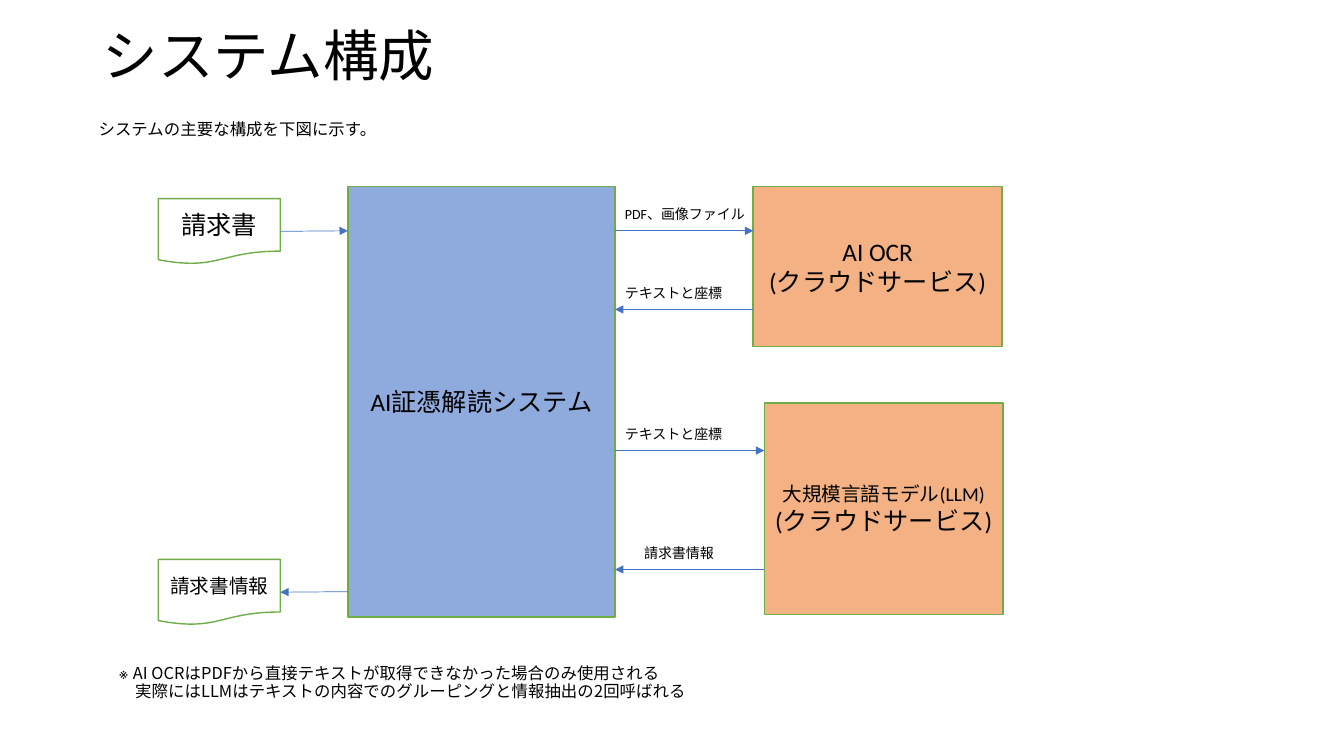
from lxml.etree import SubElement
from pptx import Presentation
from pptx.dml.color import RGBColor
from pptx.enum.shapes import MSO_CONNECTOR, MSO_SHAPE
from pptx.enum.text import MSO_ANCHOR, MSO_AUTO_SIZE, PP_ALIGN
from pptx.oxml.ns import qn
from pptx.util import Pt

PX = 9144
BLACK = RGBColor(0x00, 0x00, 0x00)
WHITE = RGBColor(0xFF, 0xFF, 0xFF)
GREEN = RGBColor(0x70, 0xAD, 0x47)
BLUE = RGBColor(0x8F, 0xAA, 0xDC)
ORANGE = RGBColor(0xF4, 0xB1, 0x83)
ARROW = RGBColor(0x44, 0x72, 0xC4)
LATIN, SYMBOL, CJK = "Calibri", "Arial", "Noto Sans CJK JP"
RIGHT = 3


def emu(*lengths):
    """Turn px lengths into EMU."""
    return [n * PX for n in lengths]


def add_run(p, text, size=18, font=LATIN, color=BLACK):
    """Append one formatted run to a paragraph."""
    r = p.add_run()
    r.text = text
    r.font.size = Pt(size)
    r.font.name = font
    r.font.color.rgb = color
    SubElement(r.font._element, qn("a:ea")).set("typeface", CJK)


def write_text(tf, lines, align=PP_ALIGN.LEFT, anchor=MSO_ANCHOR.MIDDLE, spacing=None):
    """Fill a text frame; each line is a list of (text, size, font) runs."""
    tf.word_wrap = True
    tf.vertical_anchor = anchor
    for i, runs in enumerate(lines):
        p = tf.add_paragraph() if i else tf.paragraphs[0]
        p.alignment = align
        p.line_spacing = spacing
        for run in runs:
            add_run(p, *run)


def add_box(s, kind, box, fill, lines):
    """Add a green-edged shape with centred text."""
    sp = s.shapes.add_shape(kind, *emu(*box))
    sp.shadow.inherit = False
    sp.fill.solid()
    sp.fill.fore_color.rgb = fill
    sp.line.color.rgb = GREEN
    sp.line.width = Pt(1)
    write_text(sp.text_frame, lines, align=PP_ALIGN.CENTER)
    return sp


def add_note(s, box, lines, **fmt):
    """Add a text box."""
    tf = s.shapes.add_textbox(*emu(*box)).text_frame
    write_text(tf, lines, **fmt)
    return tf


def add_arrow(s, x1, x2, y, begin=None, end=None):
    """Add a horizontal arrow, joined to the right side of a given shape."""
    c = s.shapes.add_connector(MSO_CONNECTOR.STRAIGHT, *emu(x1, y, x2, y))
    if begin:
        c.begin_connect(begin, RIGHT)
    if end:
        c.end_connect(end, RIGHT)
    c.line.color.rgb = ARROW
    c.line.width = Pt(0.5)
    SubElement(c.line._get_or_add_ln(), qn("a:tailEnd")).set("type", "triangle")
    SubElement(c._element.spPr, qn("a:effectLst"))


def add_document(s, x, y, system_left, text, size, inward):
    """Add a document and the arrow between it and the system."""
    w, h = 121, 65
    doc = add_box(s, MSO_SHAPE.FLOWCHART_DOCUMENT, (x, y, w, h), WHITE, [[(text, size)]])
    mid = y + h // 2
    if inward:
        add_arrow(s, x + w, system_left, mid, begin=doc)
    else:
        add_arrow(s, system_left, x + w, mid, end=doc)


def add_service(s, box, system_right, lines, request, reply):
    """Add a cloud service with its request and reply arrows and labels."""
    x, y = box[:2]
    add_box(s, MSO_SHAPE.RECTANGLE, box, ORANGE, lines)
    for (text, dy, dx), ends in ((request, (system_right, x)), (reply, (x, system_right))):
        add_arrow(s, *ends, y + dy)
        tf = add_note(s, (system_right + dx, y + dy - 30, 147, 27), [[(text, 10)]],
                      anchor=MSO_ANCHOR.TOP)
        tf.auto_size = MSO_AUTO_SIZE.SHAPE_TO_FIT_TEXT


def add_heading(s, x, y):
    """Place the title and the introduction."""
    title = s.shapes.title
    title.left, title.top, title.width, title.height = emu(x, y, 1150, 65)
    title.text_frame.auto_size = MSO_AUTO_SIZE.NONE
    write_text(title.text_frame, [[("システム構成", 39.6)]], spacing=0.9)
    add_note(s, (x - 4, y + 71, 327, 65),
             [[("システムの主要な構成を下図に示す。", 11.7)]], spacing=0.9)


def add_diagram(s, x, y):
    """Draw the system, its documents and its cloud services."""
    left, right = x + 188, x + 453
    cloud = ("(クラウドサービス)", 18)
    add_box(s, MSO_SHAPE.RECTANGLE, (left, y, right - left, 427), BLUE,
            [[("AI証憑解読システム", 18)]])
    add_document(s, x, y + 12, left, "請求書", 18, inward=True)
    add_document(s, x, y + 370, left, "請求書情報", 14, inward=False)
    add_service(s, (x + 590, y, 247, 159), right, [[("AI OCR", 18)], [cloud]],
                ("PDF、画像ファイル", 44, 0), ("テキストと座標", 122, 0))
    add_service(s, (x + 601, y + 215, 237, 210), right,
                [[("大規模言語モデル(LLM)", 14)], [cloud]],
                ("テキストと座標", 47, 0), ("請求書情報", 165, 19))


def add_footnote(s, x, y):
    """Place the remark below the diagram."""
    size = 11.7
    add_note(s, (x, y, 867, 65), [
        [("※ ", size, SYMBOL),
         ("AI OCRはPDFから直接テキストが取得できなかった場合のみ使用される", size, CJK)],
        [("　", size, SYMBOL),
         ("実際にはLLMはテキストの内容でのグルーピングと情報抽出の2回呼ばれる", size, CJK)],
    ], spacing=0.9)


def main():
    """Build the slide and save it."""
    prs = Presentation()
    prs.slide_width, prs.slide_height = emu(1333, 750)
    s = prs.slides.add_slide(prs.slide_layouts[5])
    add_heading(s, 92, 26)
    add_diagram(s, 157, 185)
    add_footnote(s, 108, 645)
    prs.save("out.pptx")


if __name__ == "__main__":
    main()
